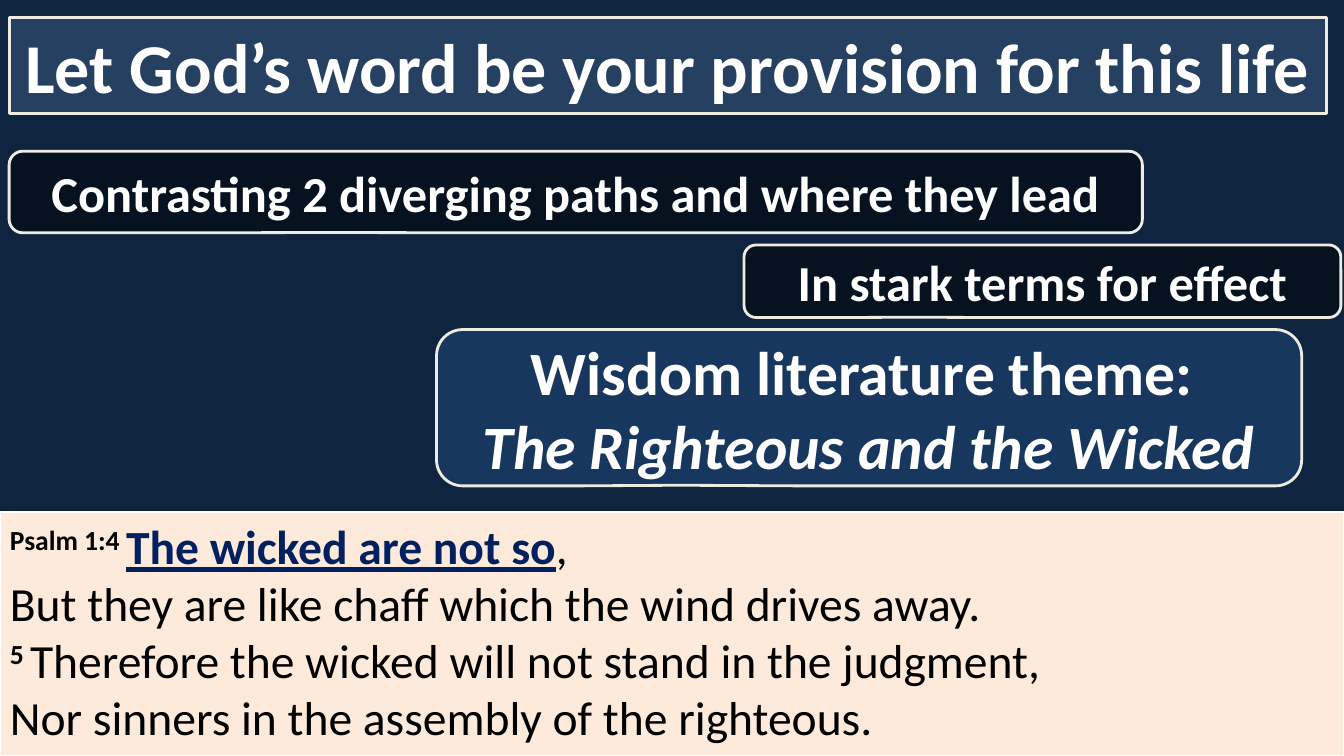
from lxml.etree import SubElement
from pptx import Presentation
from pptx.dml.color import RGBColor
from pptx.enum.shapes import MSO_SHAPE
from pptx.enum.text import MSO_ANCHOR, MSO_AUTO_SIZE, PP_ALIGN
from pptx.oxml.ns import qn
from pptx.util import Inches, Pt

# Content: each text is a list of lines, each line a list of (text, style) runs
TITLE = [[("Let God’s word be your provision for this life", "b")]]
# Boxes are left, top, width, height in percent of the slide
TITLE_BOX = (0.68, 2.27, 98.05, 12.8)
CALLOUTS = [
    ((32.48, 43.6, 64.37, 20.67), "17375E", None, 44,
     [[("Wisdom literature theme: ", "b")],
      [("The Righteous and the Wicked", "bi")]]),
    ((0.68, 20, 84.32, 10.8), "000000", 48, 36,
     [[("Contrasting 2 diverging paths and where they lead", "b")]]),
    ((55.36, 32.4, 44.41, 9.6), "000000", 48, 36,
     [[("In stark terms for effect", "b")]]),
]
PASSAGE_BOX = (0, 67.73, 100, 32.27)
PASSAGE = [
    [("Psalm 1:4 ", "b^"), ("The wicked are not so", "bu"), (",", "")],
    [("But they are like chaff which the wind drives away.", "")],
    [("5 ", "b^"), ("Therefore the wicked will not stand in the judgment,", "")],
    [("Nor sinners in the assembly of the righteous.", "")],
]
WHITE, BLACK, NAVY, CREAM = "FFFFFF", "000000", "002060", "EEECE1"
CALLOUT_ADJ = (-0.219, 0.496, 0.167)

prs = Presentation()
prs.slide_width, prs.slide_height = Inches(13.33), Inches(7.5)


def rgb(value):
    return RGBColor.from_string(value)


def place(box):
    sides = (prs.slide_width, prs.slide_height) * 2
    return [round(side * share / 100) for side, share in zip(sides, box)]


def paint(sp, fill, line, width, alpha=None):
    sp.fill.solid()
    sp.fill.fore_color.rgb = rgb(fill)
    sp.line.color.rgb = rgb(line)
    sp.line.width = Pt(width)
    sp.shadow.inherit = False
    if alpha:
        color = sp._element.spPr.find(qn("a:solidFill"))[0]
        SubElement(color, qn("a:alpha")).set("val", str(alpha * 1000))


def add_runs(p, runs, size, color):
    for text, style in runs:
        r = p.add_run()
        r.text = text
        f = r.font
        f.name, f.size = "Calibri", Pt(size)
        f.bold, f.italic, f.underline = "b" in style, "i" in style, "u" in style
        f.color.rgb = rgb(NAVY if "u" in style else color)
        if "^" in style:
            r._r.get_or_add_rPr().set("baseline", "30000")


def frame(sp, anchor):
    tf = sp.text_frame
    tf.word_wrap, tf.auto_size, tf.vertical_anchor = True, MSO_AUTO_SIZE.NONE, anchor
    return tf


def fill_callout(sp, fill, alpha, size, lines):
    for i, value in enumerate(CALLOUT_ADJ):
        sp.adjustments[i] = value
    paint(sp, fill, CREAM, 2, alpha)
    tf = frame(sp, MSO_ANCHOR.MIDDLE)
    for i, runs in enumerate(lines):
        p = tf.add_paragraph() if i else tf.paragraphs[0]
        p.alignment = PP_ALIGN.CENTER
        add_runs(p, runs, size, WHITE)


# Background
s = prs.slides.add_slide(prs.slide_layouts[5])
s.background.fill.solid()
s.background.fill.fore_color.rgb = rgb("0F243E")

# Title placeholder, given the callout outline
title = s.shapes.title
title.left, title.top, title.width, title.height = place(TITLE_BOX)
geom = SubElement(title._element.spPr, qn("a:prstGeom"))
geom.set("prst", "wedgeRoundRectCallout")
SubElement(geom, qn("a:avLst"))
fill_callout(title, "254061", None, 50, TITLE)

# Bible passage
sp = s.shapes.add_shape(MSO_SHAPE.RECTANGLE, *place(PASSAGE_BOX))
paint(sp, "FDEADA", WHITE, 1.5)
p = frame(sp, MSO_ANCHOR.TOP).paragraphs[0]
p.alignment = PP_ALIGN.LEFT
for i, runs in enumerate(PASSAGE):
    if i:
        p.add_line_break()
    add_runs(p, runs, 34, BLACK)

# Callouts
for box, fill, alpha, size, lines in CALLOUTS:
    sp = s.shapes.add_shape(MSO_SHAPE.ROUNDED_RECTANGULAR_CALLOUT, *place(box))
    fill_callout(sp, fill, alpha, size, lines)

prs.save("out.pptx")
